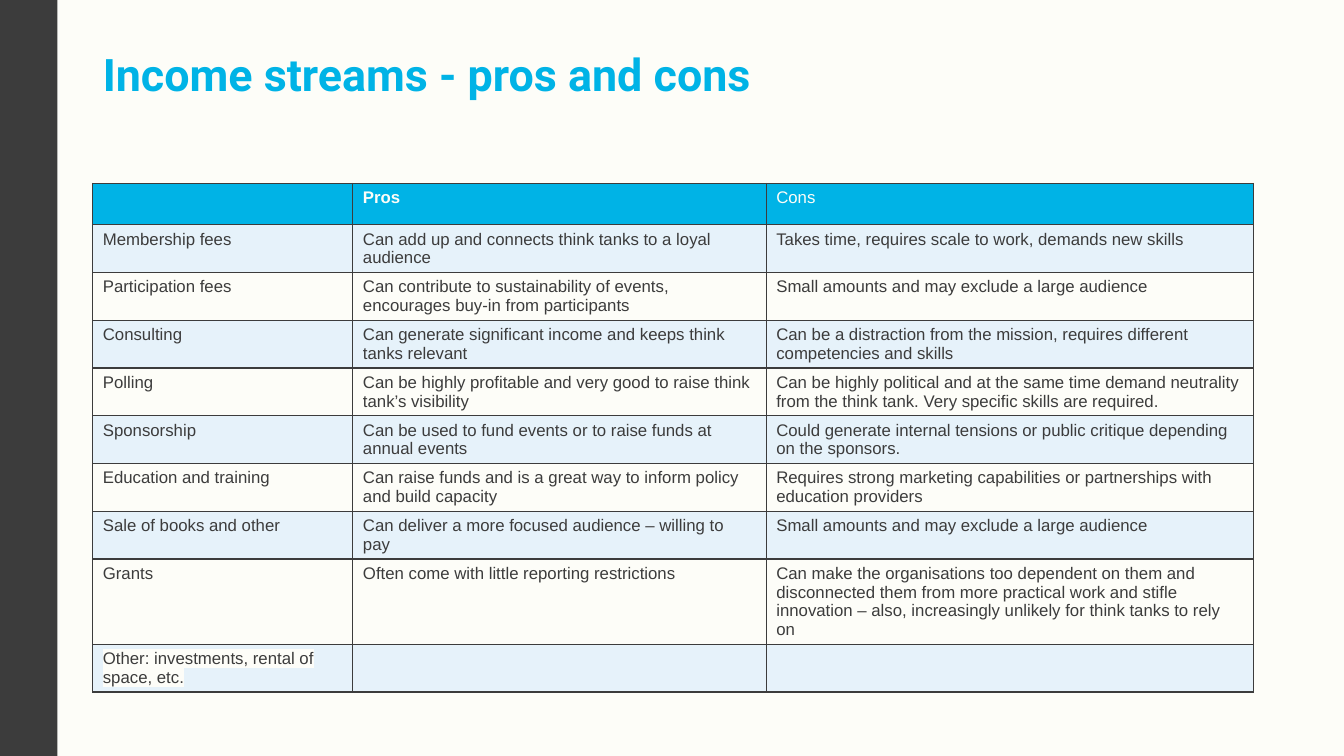
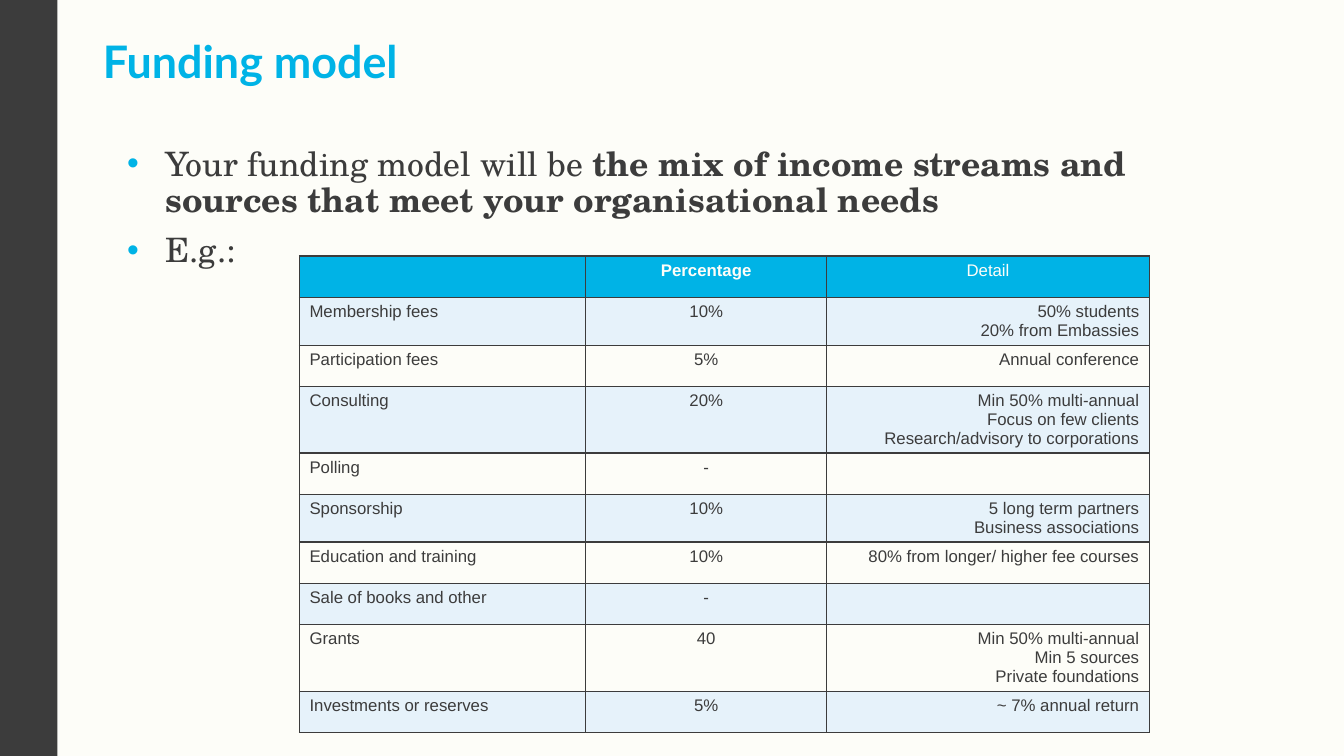
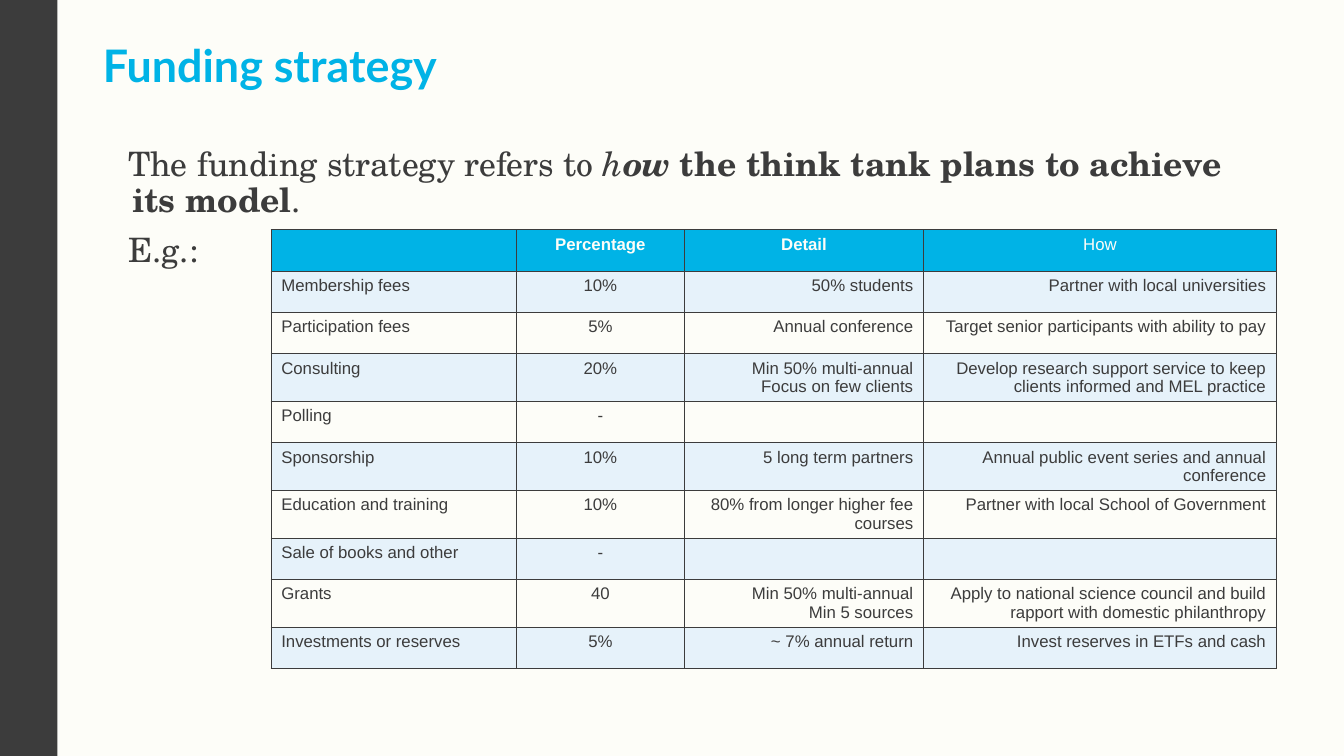
from dataclasses import dataclass

from lxml import etree
from pptx import Presentation
from pptx.dml.color import RGBColor
from pptx.enum.shapes import MSO_SHAPE as Shape
from pptx.enum.text import MSO_ANCHOR as Anchor, MSO_AUTO_SIZE as AutoSize, PP_ALIGN as Align
from pptx.oxml.ns import qn
from pptx.util import Inches, Pt


@dataclass(frozen=True)
class Theme:
    paper: str = "FDFDF8"
    ink: str = "3C3C3C"
    accent: str = "00B3E6"
    tint: str = "E6F2FA"
    body_font: str = "TeX Gyre Schola"
    table_font: str = "Arial"
    title_size: int = 32
    body_size: int = 24
    table_size: int = 12


theme = Theme()


def add_run(para, text, font, size, color, bold=False, italic=False):
    span = para.add_run()
    span.text = text
    span.font.name, span.font.size = font, Pt(size)
    span.font.bold, span.font.italic = bold, italic
    span.font.color.rgb = RGBColor.from_string(color)
    return span


def add_color(parent, tag, color):
    holder = etree.SubElement(parent, qn(tag))
    etree.SubElement(holder, qn("a:srgbClr"), val=color)
    return holder


# Content shared by the two funding tables
streams = ["Membership fees", "Participation fees", "Consulting", "Polling", "Sponsorship",
           "Education and training", "Sale of books and other", "Grants"]
funding_streams = ["", *streams, "Investments or reserves"]
shares = ["Percentage", "10%", "5%", "20%", "-", "10%", "10%", "-", "40", "5%"]

# Each table is a list of columns; a line break starts a new paragraph
pages = [
    {
        "title": "Income streams - pros and cons", "title_font": "Roboto", "title_top": 0.47,
        "table_at": (0.92, 1.82), "widths": [2.58, 4.1, 4.83],
        "aligns": [Align.LEFT] * 3, "header_align": Align.LEFT,
        "highlight": "Other: investments, rental of space, etc.",
        "columns": [
            ["", *streams, "Other: investments, rental of space, etc."],
            ["Pros",
             "Can add up and connects think tanks to a loyal audience",
             "Can contribute to sustainability of events, encourages buy-in from participants",
             "Can generate significant income and keeps think tanks relevant",
             "Can be highly profitable and very good to raise think tank’s visibility",
             "Can be used to fund events or to raise funds at annual events",
             "Can raise funds and is a great way to inform policy and build capacity",
             "Can deliver a more focused audience – willing to pay",
             "Often come with little reporting restrictions",
             ""],
            ["Cons",
             "Takes time, requires scale to work, demands new skills",
             "Small amounts and may exclude a large audience",
             "Can be a distraction from the mission, requires different competencies and skills",
             "Can be highly political and at the same time demand neutrality from the think tank. "
             "Very specific skills are required.",
             "Could generate internal tensions or public critique depending on the sponsors.",
             "Requires strong marketing capabilities or partnerships with education providers",
             "Small amounts and may exclude a large audience",
             "Can make the organisations too dependent on them and disconnected them from more "
             "practical work and stifle innovation – also, increasingly unlikely for think tanks "
             "to rely on",
             ""],
        ],
    },
    {
        "title": "Funding model", "title_font": "Lato", "title_top": 0.34,
        "bullets": True, "indent": (0.62, -0.38),
        "body": [
            [("Your funding model will be", {}),
             (" the mix of income streams and sources that meet your organisational needs",
              {"bold": True})],
            [("E.g.:", {})],
        ],
        "table_at": (2.97, 2.54), "widths": [2.84, 2.39, 3.2],
        "aligns": [Align.LEFT, Align.CENTER, Align.RIGHT], "header_align": Align.CENTER,
        "columns": [
            funding_streams,
            shares,
            ["Detail", "50% students\n20% from Embassies", "Annual conference",
             "Min 50% multi-annual\nFocus on few clients\nResearch/advisory to corporations", "",
             "5 long term partners\nBusiness associations", "80% from longer/ higher fee courses",
             "", "Min 50% multi-annual\nMin 5 sources\nPrivate foundations",
             "~ 7% annual return"],
        ],
    },
    {
        "title": "Funding strategy", "title_font": "Lato", "title_top": 0.38,
        "bullets": False, "indent": (0.29, -0.04),
        "body": [
            [("The funding strategy refers to ", {}),
             ("h", {"italic": True}),
             ("ow ", {"bold": True, "italic": True}),
             ("the think tank plans to achieve its model", {"bold": True}),
             (".", {})],
            [("E.g.:", {})],
        ],
        "table_at": (2.69, 2.28), "widths": [2.43, 1.67, 2.37, 3.5],
        "aligns": [Align.LEFT, Align.CENTER, Align.RIGHT, Align.RIGHT],
        "header_align": Align.CENTER,
        "columns": [
            funding_streams,
            shares,
            ["Detail", "50% students", "Annual conference",
             "Min 50% multi-annual\nFocus on few clients", "", "5 long term partners",
             "80% from longer higher fee courses", "", "Min 50% multi-annual\nMin 5 sources",
             "~ 7% annual return"],
            ["How", "Partner with local universities",
             "Target senior participants with ability to pay",
             "Develop research support service to keep clients informed and MEL practice", "",
             "Annual public event series and annual conference",
             "Partner with local School of Government", "",
             "Apply to national science council and build rapport with domestic philanthropy",
             "Invest reserves in ETFs and cash"],
        ],
    },
]

deck = Presentation()
deck.slide_width, deck.slide_height = Inches(13.33), Inches(7.5)

# Master background
master = deck.slide_master
master.background.fill.solid()
master.background.fill.fore_color.rgb = RGBColor.from_string(theme.paper)

for number, page in enumerate(pages):
    slide = deck.slides.add_slide(deck.slide_layouts[1 if "body" in page else 5])

    # Side band, drawn once and moved to the master
    if number == 0:
        band = slide.shapes.add_shape(Shape.RECTANGLE, 0, 0, Inches(0.57), deck.slide_height)
        band.shadow.inherit = False
        band.fill.solid()
        band.fill.fore_color.rgb = RGBColor.from_string(theme.ink)
        band.line.fill.background()
        master.element.cSld.spTree.append(band.element)

    # Title and body placeholders
    boxes = [(slide.shapes.title, page["title_top"], 0.66)]
    if "body" in page:
        boxes.append((slide.placeholders[1], 1.41, 4.69))
    for box, top, height in boxes:
        box.left, box.top = Inches(0.92), Inches(top)
        box.width, box.height = Inches(11.5), Inches(height)
        box.text_frame.auto_size = AutoSize.NONE
        box.text_frame.vertical_anchor = Anchor.TOP

    para = slide.shapes.title.text_frame.paragraphs[0]
    para.alignment, para.line_spacing = Align.LEFT, 0.9
    add_run(para, page["title"], page["title_font"], theme.title_size, theme.accent, bold=True)

    # Body paragraphs
    for index, spans in enumerate(page.get("body", [])):
        frame = slide.placeholders[1].text_frame
        para = frame.add_paragraph() if index else frame.paragraphs[0]
        props = para._p.get_or_add_pPr()
        margin, hanging = page["indent"]
        props.set("marL", str(Inches(margin)))
        props.set("indent", str(Inches(hanging)))
        if page["bullets"]:
            add_color(props, "a:buClr", theme.accent)
            etree.SubElement(props, qn("a:buFont"), typeface="Arial")
            etree.SubElement(props, qn("a:buChar"), char="•")
        else:
            etree.SubElement(props, qn("a:buNone"))
        para.line_spacing = 0.9
        para.space_before = Pt(10 if index else 0)
        for text, style in spans:
            add_run(para, text, theme.body_font, theme.body_size, theme.ink, **style)

    # Table grid
    rows = list(zip(*page["columns"]))
    left, top = page["table_at"]
    widths = page["widths"]
    row_height = 0.41
    table = slide.shapes.add_table(len(rows), len(widths), Inches(left), Inches(top),
                                   Inches(sum(widths)), Inches(row_height * len(rows))).table
    for column, width in zip(table.columns, widths):
        column.width = Inches(width)
    for row in table.rows:
        row.height = Inches(row_height)

    # Table cells
    for row_index, texts in enumerate(rows):
        header = row_index == 0
        fill = theme.accent if header else (theme.paper, theme.tint)[row_index % 2]
        for column_index, text in enumerate(texts):
            cell = table.cell(row_index, column_index)
            for side in ("a:lnL", "a:lnR", "a:lnT", "a:lnB"):
                border = etree.SubElement(cell._tc.get_or_add_tcPr(), qn(side), w=str(Pt(1)))
                add_color(border, "a:solidFill", theme.ink)
            cell.fill.solid()
            cell.fill.fore_color.rgb = RGBColor.from_string(fill)
            if not text:
                continue
            for index, line in enumerate(text.split("\n")):
                frame = cell.text_frame
                para = frame.add_paragraph() if index else frame.paragraphs[0]
                para.alignment = page["header_align"] if header else page["aligns"][column_index]
                span = add_run(para, line, theme.table_font, theme.table_size,
                               theme.paper if header else theme.ink,
                               bold=header and column_index < len(widths) - 1)
                if text == page.get("highlight"):
                    props = span._r.get_or_add_rPr()
                    mark = add_color(props, "a:highlight", theme.paper)
                    props.find(qn("a:solidFill")).addnext(mark)

deck.save("out.pptx")
